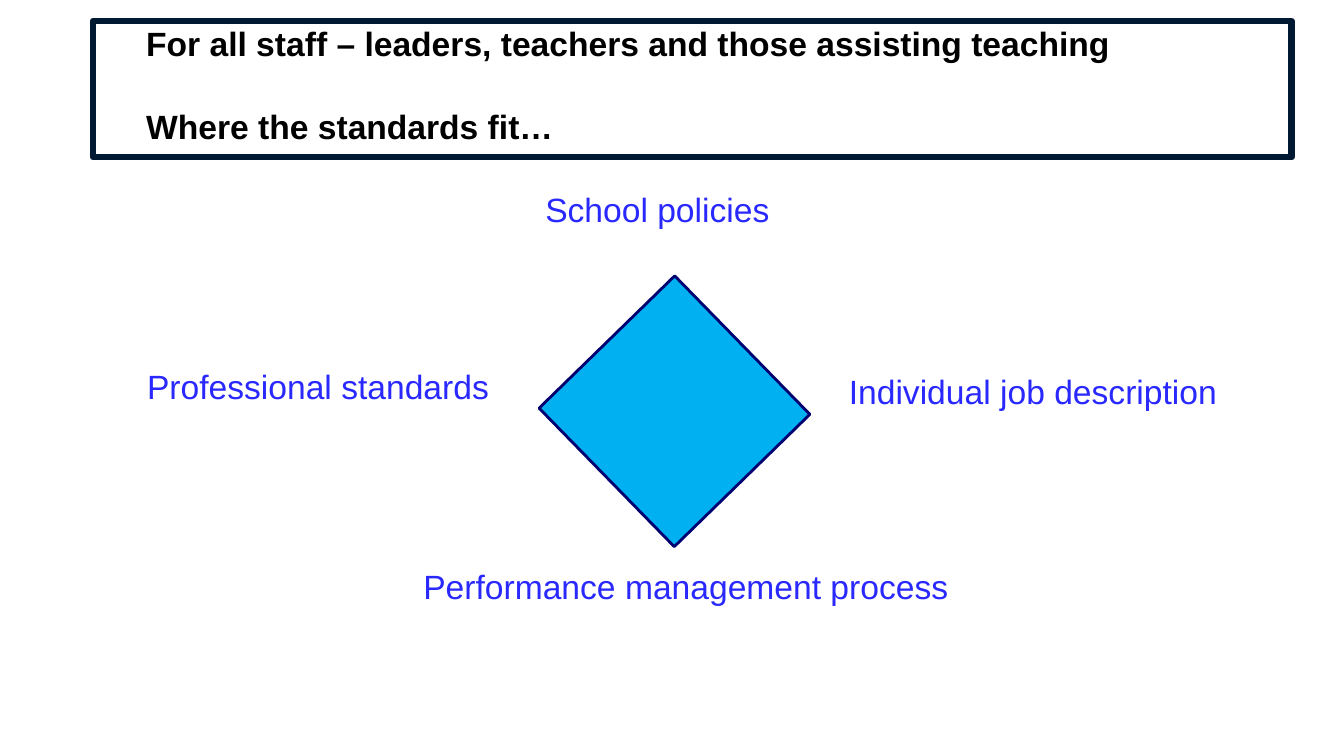
from pptx import Presentation
from pptx.dml.color import RGBColor
from pptx.enum.shapes import MSO_SHAPE
from pptx.enum.text import MSO_ANCHOR, MSO_AUTO_SIZE, PP_ALIGN
from pptx.util import Inches, Pt

WIDTH, HEIGHT = Inches(13.33), Inches(7.5)
LABEL_HEIGHT = 6.67
HEADING = [
    "For all staff – leaders, teachers and those assisting teaching",
    "Where the standards fit…",
]
LABELS = [
    ("School policies", 39.83, 24.27, 24.31),
    ("Individual job description", 62.42, 48.4, 32.48),
    ("Professional standards", 10.2, 47.73, 27.76),
    ("Performance management process", 30.76, 74.13, 42.01),
]


def color(hex_code):
    """Turn a hex string into a colour."""
    return RGBColor.from_string(hex_code)


def place(left, top, width, height):
    """Turn percentages of the slide's size into a position and size."""
    return [
        round(share * side / 100)
        for share, side in zip((left, top, width, height), (WIDTH, HEIGHT) * 2)
    ]


def outline(element, hex_code, points):
    """Draw the border of an element."""
    element.line.color.rgb = color(hex_code)
    element.line.width = Pt(points)


def write(frame, lines, hex_code="2929FF", bold=False, gap=0):
    """Fill a text frame with left-aligned paragraphs, gap points apart."""
    frame.word_wrap = True
    for index, line in enumerate(lines):
        paragraph = frame.add_paragraph() if index else frame.paragraphs[0]
        paragraph.alignment = PP_ALIGN.LEFT
        paragraph.space_before = Pt(gap if index else 0)
        run = paragraph.add_run()
        run.text = line
        run.font.name = "Arial"
        run.font.size = Pt(24)
        run.font.bold = bold
        run.font.color.rgb = color(hex_code)


def add_heading(slide):
    """Place the framed heading in the title placeholder."""
    heading = slide.shapes.title
    heading.left, heading.top, heading.width, heading.height = place(6.9, 2.8, 89.2, 18)
    outline(heading, "001933", 4.5)
    frame = heading.text_frame
    frame.auto_size = MSO_AUTO_SIZE.NONE
    frame.vertical_anchor = MSO_ANCHOR.TOP
    frame.margin_left, frame.margin_top = Inches(0.53), Inches(0.02)
    frame.margin_right = frame.margin_bottom = 0
    write(frame, HEADING, "000000", bold=True, gap=30.3)


def add_label(slide, wording, left, top, width):
    """Add one label beside a corner of the diamond."""
    label = slide.shapes.add_textbox(*place(left, top, width, LABEL_HEIGHT))
    write(label.text_frame, [wording])


def add_diamond(slide):
    """Add the central rectangle, turned to stand on a corner."""
    diamond = slide.shapes.add_shape(
        MSO_SHAPE.RECTANGLE, *place(43.14, 41.6, 14.1, 25.6)
    )
    diamond.rotation = 315.7
    diamond.shadow.inherit = False
    diamond.fill.solid()
    diamond.fill.fore_color.rgb = color("00B0F0")
    outline(diamond, "000071", 2)


def main():
    """Build and save the slide."""
    deck = Presentation()
    deck.slide_width, deck.slide_height = WIDTH, HEIGHT
    slide = deck.slides.add_slide(deck.slide_layouts.get_by_name("Title Only"))
    add_heading(slide)
    for label in LABELS:
        add_label(slide, *label)
    add_diamond(slide)
    deck.save("out.pptx")


if __name__ == "__main__":
    main()
